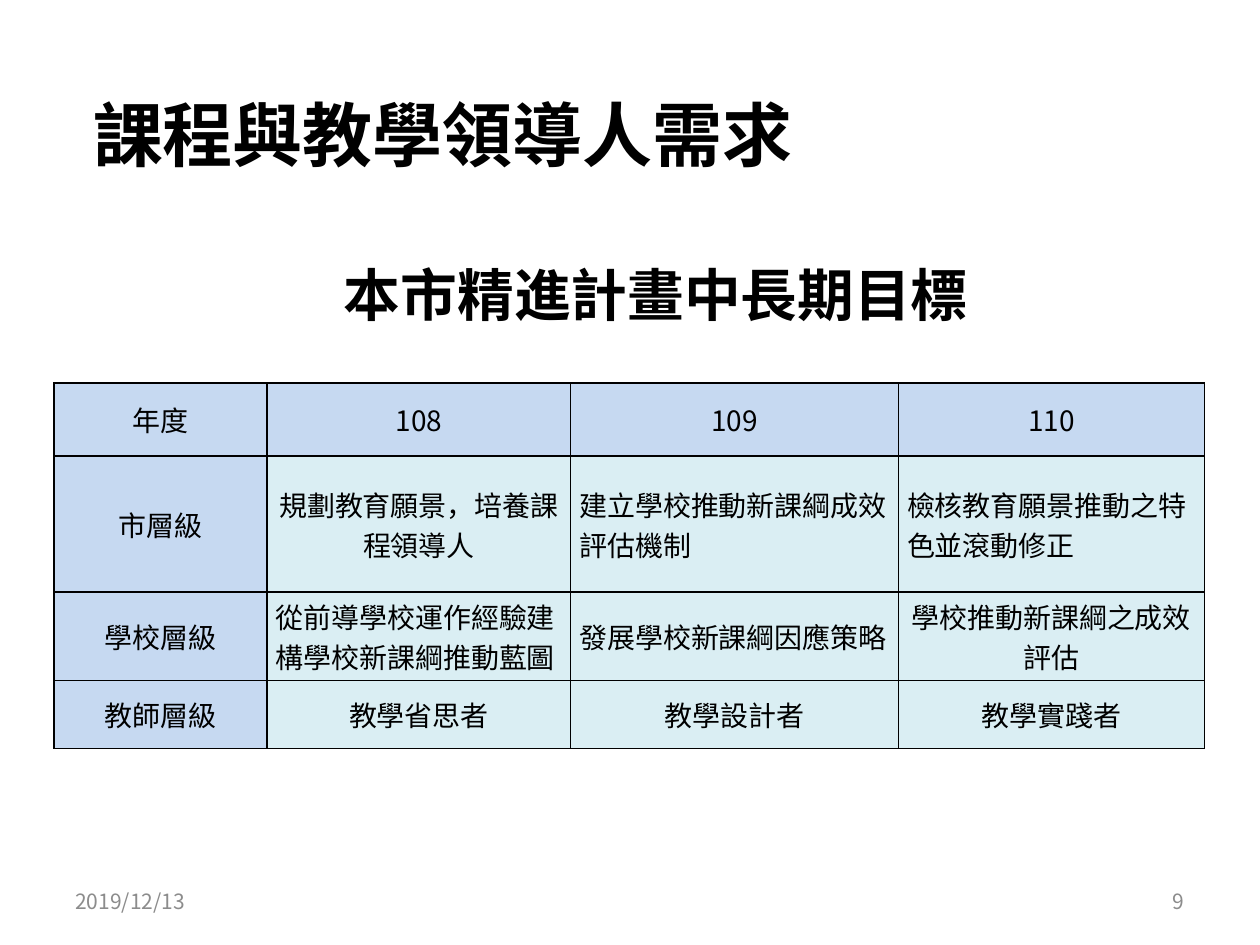
from lxml.etree import SubElement as Sub
from pptx import Presentation
from pptx.dml.color import RGBColor as RGB
from pptx.enum.text import MSO_ANCHOR as Anchor, MSO_AUTO_SIZE as Auto, PP_ALIGN as Align
from pptx.oxml.ns import qn
from pptx.util import Inches, Pt

HUES = {"ink": "000000", "gray": "8C8C8C", "head": "C6D9F1", "cell": "DAEEF3"}
NOTO = "Noto Sans CJK SC"
COLS = [1.69, 2.41, 2.6, 2.43]
ROWS = [0.58, 1.08, 0.7, 0.54]
GOALS = [
    ["年度", "108", "109", "110"],
    ["市層級", "規劃教育願景，培養課程領導人",
     "建立學校推動新課綱成效評估機制", "檢核教育願景推動之特色並滾動修正"],
    ["學校層級", "從前導學校運作經驗建構學校新課綱推動藍圖",
     "發展學校新課綱因應策略", "學校推動新課綱之成效評估"],
    ["教師層級", "教學省思者", "教學設計者", "教學實踐者"],
]
LEFT = {(1, 2), (1, 3), (2, 1), (2, 2)}  # left-aligned cells


def style(frame, text, size, hue="ink", bold=False, align=Align.LEFT, face=NOTO):
    frame.text = text
    para = frame.paragraphs[0]
    para.alignment = align
    run = para.runs[0]
    font = run.font
    font.size, font.bold, font.name = Pt(size), bold, face
    font.color.rgb = RGB.from_string(HUES[hue])
    Sub(font._element, qn("a:ea"), typeface=NOTO)


def add_text(slide, box, text, size, anchor=Anchor.MIDDLE, **look):
    frame = slide.shapes.add_textbox(*map(Inches, box)).text_frame
    frame.word_wrap = True
    frame.vertical_anchor = anchor
    style(frame, text, size, **look)


def add_title(slide, box, text):
    title = slide.shapes.title
    title.left, title.top, title.width, title.height = map(Inches, box)
    frame = title.text_frame
    frame.auto_size = Auto.NONE
    frame.vertical_anchor = Anchor.MIDDLE
    frame.margin_left = Inches(0.23)
    style(frame, text, 32.4, bold=True, align=Align.CENTER)


def add_edges(cell):
    props = cell._tc.get_or_add_tcPr()
    for i, side in enumerate(("lnL", "lnR", "lnT", "lnB")):
        line = props.makeelement(qn(f"a:{side}"), {"w": str(Pt(1))})
        fill = Sub(line, qn("a:solidFill"))
        Sub(fill, qn("a:srgbClr"), val=HUES["ink"])
        props.insert(i, line)


def add_goals(slide, left, top):
    shape = slide.shapes.add_table(len(ROWS), len(COLS), Inches(left), Inches(top),
                                   Inches(sum(COLS)), Inches(sum(ROWS)))
    table = shape.table
    for col, width in zip(table.columns, COLS):
        col.width = Inches(width)
    for row, height in zip(table.rows, ROWS):
        row.height = Inches(height)
    for r, line in enumerate(GOALS):
        for c, text in enumerate(line):
            cell = table.cell(r, c)
            cell.margin_left = cell.margin_right = Inches(0.07)
            cell.margin_top = cell.margin_bottom = 0
            cell.vertical_anchor = Anchor.MIDDLE
            hue = "cell" if r and c else "head"
            cell.fill.solid()
            cell.fill.fore_color.rgb = RGB.from_string(HUES[hue])
            style(cell.text_frame, text, 16,
                  align=Align.LEFT if (r, c) in LEFT else Align.CENTER,
                  face="Calibri" if r else NOTO)
            add_edges(cell)


def add_foot(slide, left, top, width):
    part = 2.33
    add_text(slide, (left, top, part, 0.4), "2019/12/13", 12, hue="gray")
    add_text(slide, (left + width - part, top, part, 0.4), "9", 12,
             hue="gray", align=Align.RIGHT)


def main():
    deck = Presentation()
    deck.slide_width, deck.slide_height = Inches(10), Inches(7.5)
    slide = deck.slides.add_slide(deck.slide_layouts[5])
    add_title(slide, (0.64, 1.94, 9, 0.79), "本市精進計畫中長期目標")
    add_goals(slide, 0.43, 3.04)
    add_foot(slide, 0.5, 6.95, 9)
    add_text(slide, (0.64, 0.68, 5.87, 0.77), "課程與教學領導人需求", 40,
             anchor=Anchor.TOP, bold=True)
    deck.save("out.pptx")


if __name__ == "__main__":
    main()
